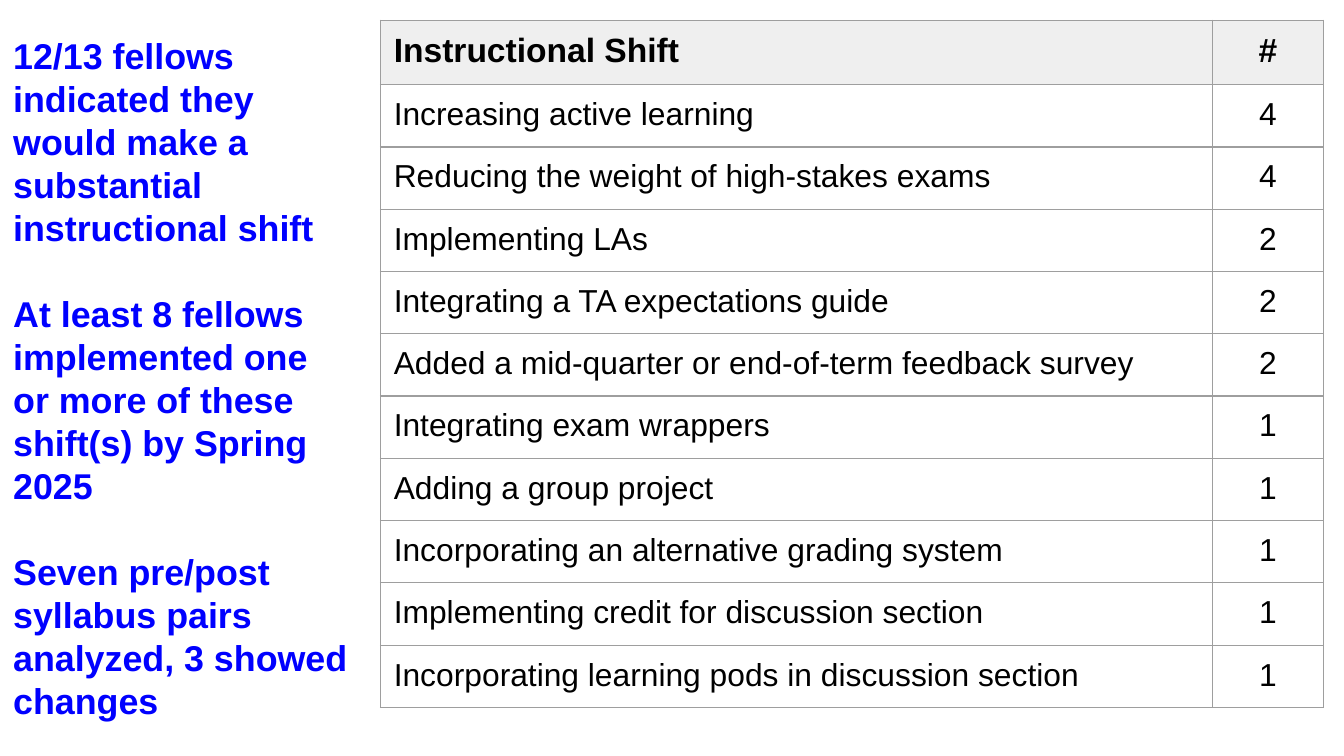
from lxml import etree
from pptx import Presentation
from pptx.dml.color import RGBColor
from pptx.enum.text import MSO_ANCHOR, PP_ALIGN
from pptx.oxml.ns import qn
from pptx.util import Inches, Pt

LEFT, CENTER = PP_ALIGN.LEFT, PP_ALIGN.CENTER
TOP = MSO_ANCHOR.TOP
SLIDE_WIDTH = Inches(10)
SLIDE_HEIGHT = SLIDE_WIDTH * 9 // 16
INSET = Inches(0.1)
CELL_INSET = Inches(0.09)
TOP_EDGE = Inches(0.15)
FONT = "Arial"
BORDER_WIDTH = Pt(0.75)
COLORS = {
    "finding": "0000FF",
    "text": "000000",
    "header": "EFEFEF",
    "border": "9E9E9E",
}
FINDINGS = [
    "12/13 fellows indicated they would make a substantial instructional shift",
    "At least 8 fellows implemented one or more of these shift(s) by Spring 2025",
    "Seven pre/post syllabus pairs analyzed, 3 showed changes",
]
SHIFTS = [
    ("Instructional Shift", "#"),
    ("Increasing active learning", "4"),
    ("Reducing the weight of high-stakes exams", "4"),
    ("Implementing LAs", "2"),
    ("Integrating a TA expectations guide", "2"),
    ("Added a mid-quarter or end-of-term feedback survey", "2"),
    ("Integrating exam wrappers", "1"),
    ("Adding a group project", "1"),
    ("Incorporating an alternative grading system", "1"),
    ("Implementing credit for discussion section", "1"),
    ("Incorporating learning pods in discussion section", "1"),
]


def set_insets(holder, vertical):
    holder.margin_left = holder.margin_right = INSET
    holder.margin_top = holder.margin_bottom = vertical


def style_paragraph(paragraph, text, size, color, bold, alignment=LEFT):
    paragraph.text = text
    paragraph.alignment = alignment
    paragraph.font.name = FONT
    paragraph.font.size = Pt(size)
    paragraph.font.bold = bold
    paragraph.font.color.rgb = RGBColor.from_string(COLORS[color])


def add_findings(slide):
    box = slide.shapes.add_textbox(0, TOP_EDGE, Inches(2.73), Inches(0.63))
    frame = box.text_frame
    frame.word_wrap = True
    frame.vertical_anchor = TOP
    set_insets(frame, INSET)
    for index, finding in enumerate(FINDINGS):
        paragraph = frame.add_paragraph() if index else frame.paragraphs[0]
        style_paragraph(paragraph, finding, 19.2, "finding", True)
        paragraph.line_spacing = Pt(23.04)
        if index:
            paragraph.space_before = Pt(23.04)


def add_borders(cell):
    properties = cell._tc.get_or_add_tcPr()
    for side in ("a:lnL", "a:lnR", "a:lnT", "a:lnB"):
        line = etree.SubElement(properties, qn(side), w=str(BORDER_WIDTH))
        fill = etree.SubElement(line, qn("a:solidFill"))
        etree.SubElement(fill, qn("a:srgbClr"), val=COLORS["border"])


def fill_cell(cell, text, is_header, alignment):
    set_insets(cell, CELL_INSET)
    cell.vertical_anchor = TOP
    add_borders(cell)
    if is_header:
        cell.fill.solid()
        cell.fill.fore_color.rgb = RGBColor.from_string(COLORS["header"])
    else:
        cell.fill.background()
    size = 18 if is_header else 17
    style_paragraph(cell.text_frame.paragraphs[0], text, size, "text", is_header, alignment)


def add_shift_table(slide):
    widths = [Inches(6.19), Inches(0.83)]
    heights = [Inches(0.41)] + [Inches(0.36)] * (len(SHIFTS) - 1)
    frame = slide.shapes.add_table(
        len(SHIFTS), len(widths), Inches(2.83), TOP_EDGE, sum(widths), sum(heights)
    )
    table = frame.table
    table.horz_banding = False
    for column, width in zip(table.columns, widths):
        column.width = width
    for index, (row, height) in enumerate(zip(table.rows, heights)):
        row.height = height
        for cell, text, alignment in zip(row.cells, SHIFTS[index], (LEFT, CENTER)):
            fill_cell(cell, text, index == 0, alignment)


def main():
    presentation = Presentation()
    presentation.slide_width = SLIDE_WIDTH
    presentation.slide_height = SLIDE_HEIGHT
    slide = presentation.slides.add_slide(presentation.slide_layouts[6])
    add_findings(slide)
    add_shift_table(slide)
    presentation.save("out.pptx")


if __name__ == "__main__":
    main()
